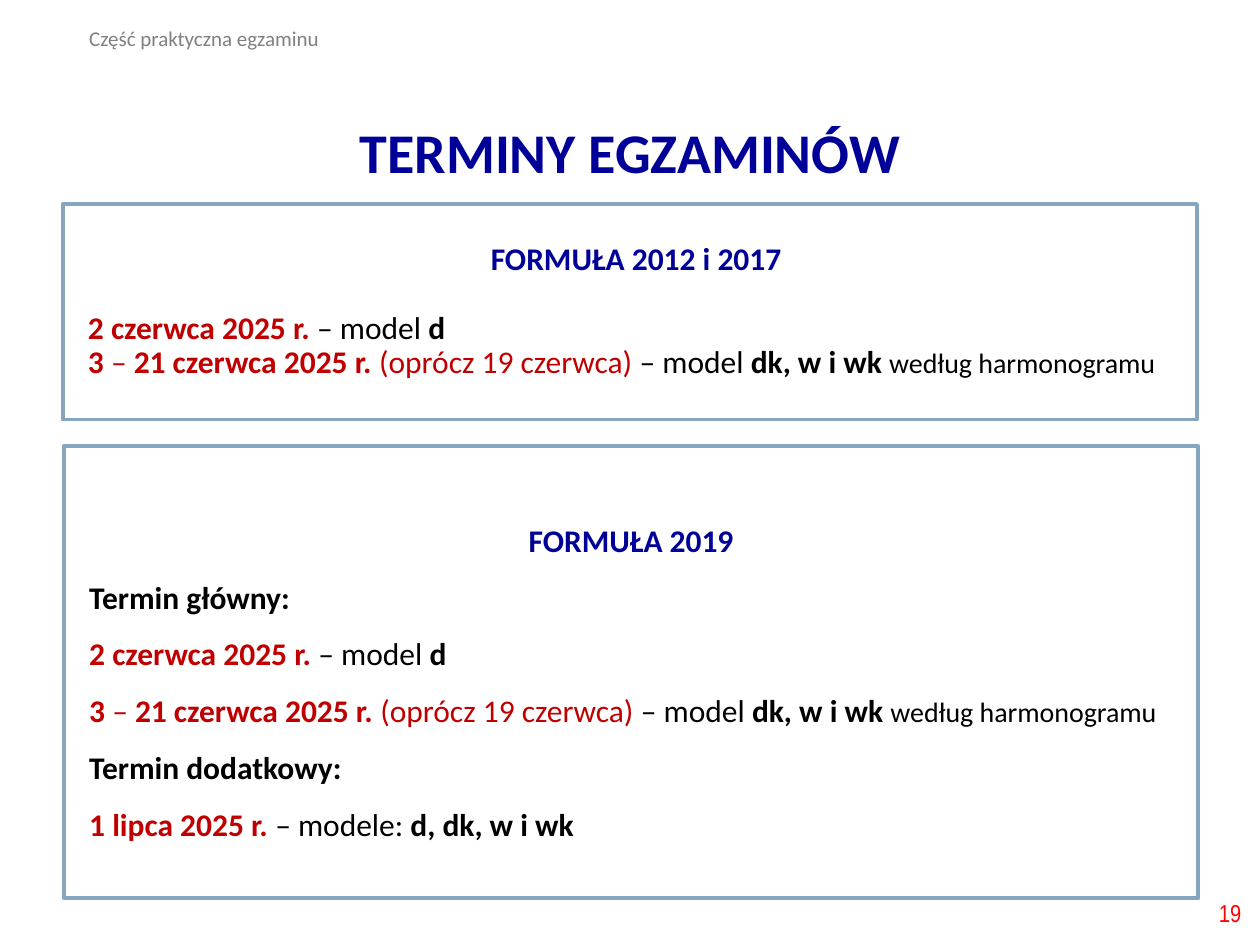
from pptx import Presentation
from pptx.dml.color import RGBColor
from pptx.enum.shapes import MSO_SHAPE
from pptx.enum.text import MSO_ANCHOR, MSO_AUTO_SIZE, PP_ALIGN
from pptx.util import Inches, Pt

LEFT, CENTER, RIGHT = PP_ALIGN.LEFT, PP_ALIGN.CENTER, PP_ALIGN.RIGHT
MIDDLE, TOP = MSO_ANCHOR.MIDDLE, MSO_ANCHOR.TOP
RECTANGLE = MSO_SHAPE.RECTANGLE
NO_AUTOFIT = MSO_AUTO_SIZE.NONE

NAVY = RGBColor(0x00, 0x00, 0x99)
DARK_RED = RGBColor(0xC0, 0x00, 0x00)
RED = RGBColor(0xFF, 0x00, 0x00)
GRAY = RGBColor(0x80, 0x80, 0x80)
BLACK = RGBColor(0x00, 0x00, 0x00)
STEEL_BLUE = RGBColor(0x86, 0xA5, 0xBE)

# Each line is a list of (text, format) spans.
MAIN_DAY = [
    ("2 czerwca 2025 r. ", dict(bold=True, color=DARK_RED)),
    ("– model ", {}),
    ("d", dict(bold=True)),
]
MAIN_PERIOD = [
    ("3 ", dict(bold=True, color=DARK_RED)),
    ("–", dict(color=DARK_RED)),
    (" 21 czerwca 2025 r. ", dict(bold=True, color=DARK_RED)),
    ("(oprócz 19 czerwca) ", dict(color=DARK_RED)),
    ("– model", {}),
    (" dk, w i wk ", dict(bold=True)),
    ("według harmonogramu", dict(size=16)),
]
EXTRA_DAY = [
    ("1 lipca 2025 r. ", dict(bold=True, color=DARK_RED)),
    ("– modele:", {}),
    (" d, dk, w i wk", dict(bold=True)),
]


def add_span(para, text, size=18, font="Calibri", color=BLACK, bold=False):
    span = para.add_run()
    span.text = text
    span.font.size = Pt(size)
    span.font.name = font
    span.font.color.rgb = color
    span.font.bold = bold


def format_para(para, align=LEFT, spacing=1.0, indent=0, before=0):
    para.alignment = align
    para.line_spacing = spacing
    para.space_before = Pt(before)
    properties = para._p.get_or_add_pPr()
    properties.set("marL", str(Inches(indent)))
    properties.set("indent", "0")


def place(shape, left, top, width, height):
    shape.left, shape.top = Inches(left), Inches(top)
    shape.width, shape.height = Inches(width), Inches(height)


def set_title(page, text):
    title = page.shapes.title
    place(title, 0.69, 0.61, 8.62, 0.91)
    frame = title.text_frame
    frame.auto_size = NO_AUTOFIT
    frame.vertical_anchor = MIDDLE
    para = frame.paragraphs[0]
    format_para(para, align=CENTER, spacing=1.5)
    add_span(para, text, size=32, color=NAVY, bold=True)


def add_label(page, text, bounds, align=LEFT, anchor=TOP, **style):
    box = page.shapes.add_textbox(*map(Inches, bounds))
    frame = box.text_frame
    frame.word_wrap = True
    frame.vertical_anchor = anchor
    format_para(frame.paragraphs[0], align=align)
    add_span(frame.paragraphs[0], text, **style)


def add_schedule(page, heading, lines, bounds, spacing, heading_indent=0.1, gap=0):
    """Add an outlined box with a centred heading, a gap in points and dated lines."""
    box = page.shapes.add_shape(RECTANGLE, *map(Inches, bounds))
    box.shadow.inherit = False
    box.fill.background()
    box.line.color.rgb = STEEL_BLUE
    box.line.width = Pt(2.25)
    frame = box.text_frame
    frame.word_wrap = True
    frame.vertical_anchor = MIDDLE
    para = frame.paragraphs[0]
    format_para(para, align=CENTER, spacing=spacing, indent=heading_indent)
    add_span(para, heading, color=NAVY, bold=True)
    for index, line in enumerate(lines):
        para = frame.add_paragraph()
        format_para(para, spacing=spacing, indent=0.1, before=0 if index else gap)
        for text, style in line:
            add_span(para, text, **style)


def main():
    deck = Presentation()
    deck.slide_width, deck.slide_height = Inches(10), Inches(7.5)
    page = deck.slides.add_slide(deck.slide_layouts[5])

    set_title(page, "TERMINY EGZAMINÓW")
    add_label(page, "19", (7.7, 7.04, 2.25, 0.4), align=RIGHT, anchor=MIDDLE,
              size=14, font="Arial Narrow", color=RED)
    add_schedule(
        page, "FORMUŁA 2019",
        [
            [("Termin główny:", dict(bold=True))],
            MAIN_DAY,
            MAIN_PERIOD,
            [("Termin dodatkowy:", dict(bold=True))],
            EXTRA_DAY,
        ],
        (0.51, 3.54, 9, 3.59), spacing=1.5, heading_indent=0)
    add_schedule(page, "FORMUŁA 2012 i 2017", [MAIN_DAY, MAIN_PERIOD],
                 (0.5, 1.62, 9, 1.71), spacing=0.9, gap=20)
    add_label(page, "Część praktyczna egzaminu", (0.61, 0.15, 2.67, 0.3),
              size=12, color=GRAY)

    deck.save("out.pptx")


if __name__ == "__main__":
    main()
